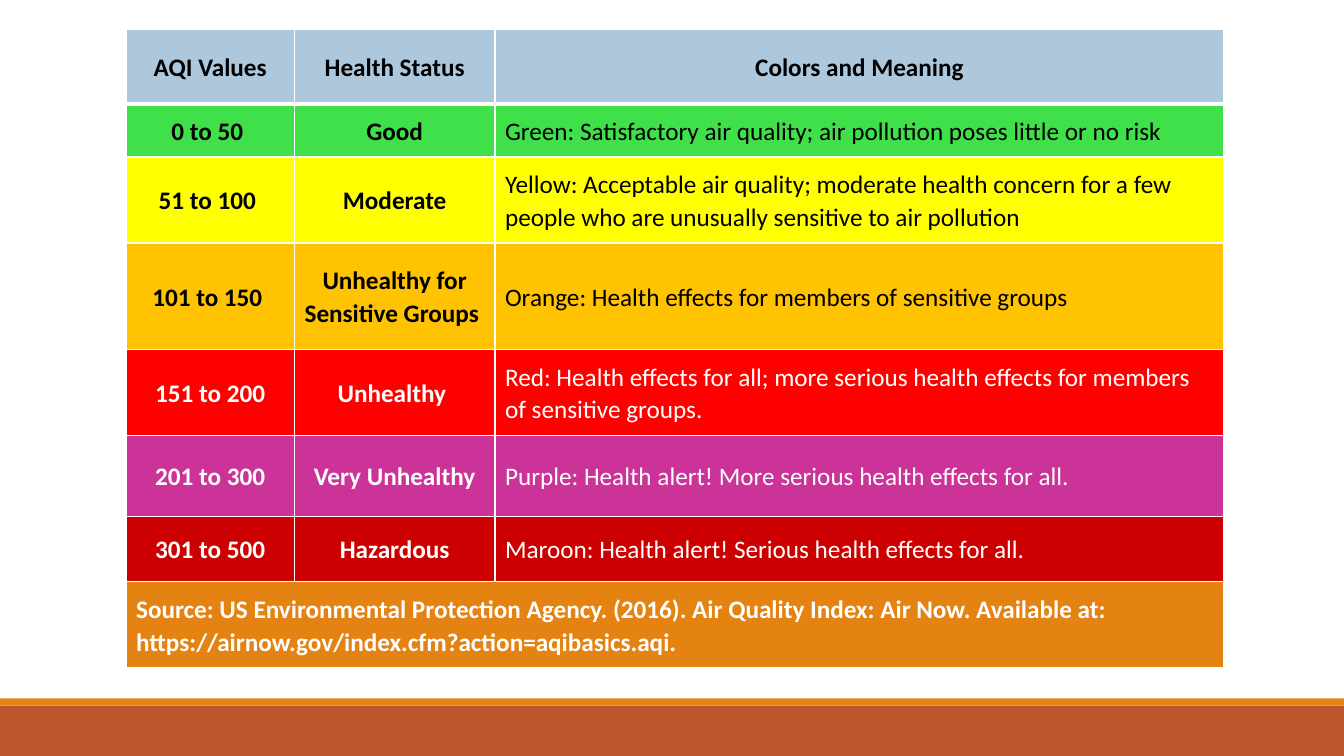
from dataclasses import dataclass

from lxml.etree import SubElement
from pptx import Presentation
from pptx.dml.color import RGBColor as Color
from pptx.enum.shapes import MSO_SHAPE as Shape
from pptx.enum.text import MSO_ANCHOR as Anchor, PP_ALIGN as Align
from pptx.oxml.ns import qn
from pptx.util import Inches, Pt


@dataclass(frozen=True)
class Theme:
    font: str = "Calibri"
    size: int = 18
    dark: str = "000000"
    light: str = "FFFFFF"
    header: str = "ADC8DD"
    good: str = "40E04B"
    moderate: str = "FFFF00"
    sensitive: str = "FFC301"
    unhealthy: str = "FF0000"
    very_unhealthy: str = "CC3399"
    hazardous: str = "CC0000"
    accent: str = "E48312"
    footer: str = "BD582C"


theme = Theme()


def set_borders(cell, top, bottom):
    props = cell._tc.get_or_add_tcPr()
    widths = {"a:lnL": 1, "a:lnR": 1, "a:lnT": top, "a:lnB": bottom}
    for place, (tag, width) in enumerate(widths.items()):
        line = SubElement(props, qn(tag), w=str(Pt(width)))
        paint = SubElement(line, qn("a:solidFill"))
        SubElement(paint, qn("a:srgbClr"), val=theme.light)
        props.insert(place, line)


def write_cell(cell, text, fill, ink, bold, align):
    cell.fill.solid()
    cell.fill.fore_color.rgb = Color.from_string(fill)
    cell.vertical_anchor = Anchor.MIDDLE
    cell.margin_left = cell.margin_right = Inches(0.1)
    cell.margin_top = cell.margin_bottom = Inches(0.1)
    para = cell.text_frame.paragraphs[0]
    para.alignment = align
    para.line_spacing = 1.07
    para.space_after = Pt(8)
    span = para.add_run()
    span.text = text
    span.font.name = theme.font
    span.font.size = Pt(theme.size)
    span.font.bold = bold
    span.font.color.rgb = Color.from_string(ink)


deck = Presentation()
deck.slide_width, deck.slide_height = Inches(13.33), Inches(7.5)
page = deck.slides.add_slide(deck.slide_layouts[6])

for top, height, color in [(7, 0.5, theme.footer), (6.93, 0.07, theme.accent)]:
    band = page.shapes.add_shape(
        Shape.RECTANGLE, 0, Inches(top), deck.slide_width, Inches(height))
    band.shadow.inherit = False
    band.fill.solid()
    band.fill.fore_color.rgb = Color.from_string(color)
    band.line.fill.background()

levels = [
    (0.74, theme.header, theme.dark, "AQI Values", "Health Status", "Colors and Meaning"),
    (0.51, theme.good, theme.dark, "0 to 50 ", "Good",
     "Green: Satisfactory air quality; air pollution poses little or no risk"),
    (0.79, theme.moderate, theme.dark, "51 to 100 ", "Moderate",
     "Yellow: Acceptable air quality; moderate health concern for a few people "
     "who are unusually sensitive to air pollution"),
    (1.06, theme.sensitive, theme.dark, "101 to 150 ", "Unhealthy for Sensitive Groups ",
     "Orange: Health effects for members of sensitive groups"),
    (0.73, theme.unhealthy, theme.light, "151 to 200", "Unhealthy ",
     "Red: Health effects for all; more serious health effects for members "
     "of sensitive groups."),
    (0.8, theme.very_unhealthy, theme.light, "201 to 300", "Very Unhealthy",
     "Purple: Health alert! More serious health effects for all."),
    (0.65, theme.hazardous, theme.light, "301 to 500", "Hazardous",
     "Maroon: Health alert! Serious health effects for all."),
]
source = ("Source: US Environmental Protection Agency. (2016). Air Quality Index: Air Now. "
          "Available at: https://airnow.gov/index.cfm?action=aqibasics.aqi.")
source_height = 0.65
columns = [1.67, 1.99, 7.23]
heights = [level[0] for level in levels] + [source_height]

table = page.shapes.add_table(
    len(heights), len(columns), Inches(1.25), Inches(0.29),
    Inches(sum(columns)), Inches(sum(heights))).table
for column, width in zip(table.columns, columns):
    column.width = Inches(width)
for row, height in zip(table.rows, heights):
    row.height = Inches(height)

for r, (height, fill, ink, *texts) in enumerate(levels):
    for c, text in enumerate(texts):
        heading = r == 0 or c < 2
        write_cell(table.cell(r, c), text, fill, ink, heading,
                   Align.CENTER if heading else Align.LEFT)

source_cell = table.cell(len(levels), 0)
source_cell.merge(table.cell(len(levels), len(columns) - 1))
write_cell(source_cell, source, theme.accent, theme.light, True, Align.LEFT)
source_cell.text_frame.paragraphs[0].space_after = Pt(0)

for r, row in enumerate(table.rows):
    for cell in row.cells:
        set_borders(cell, 3 if r == 1 else 1, 3 if r == 0 else 1)

deck.save("out.pptx")
